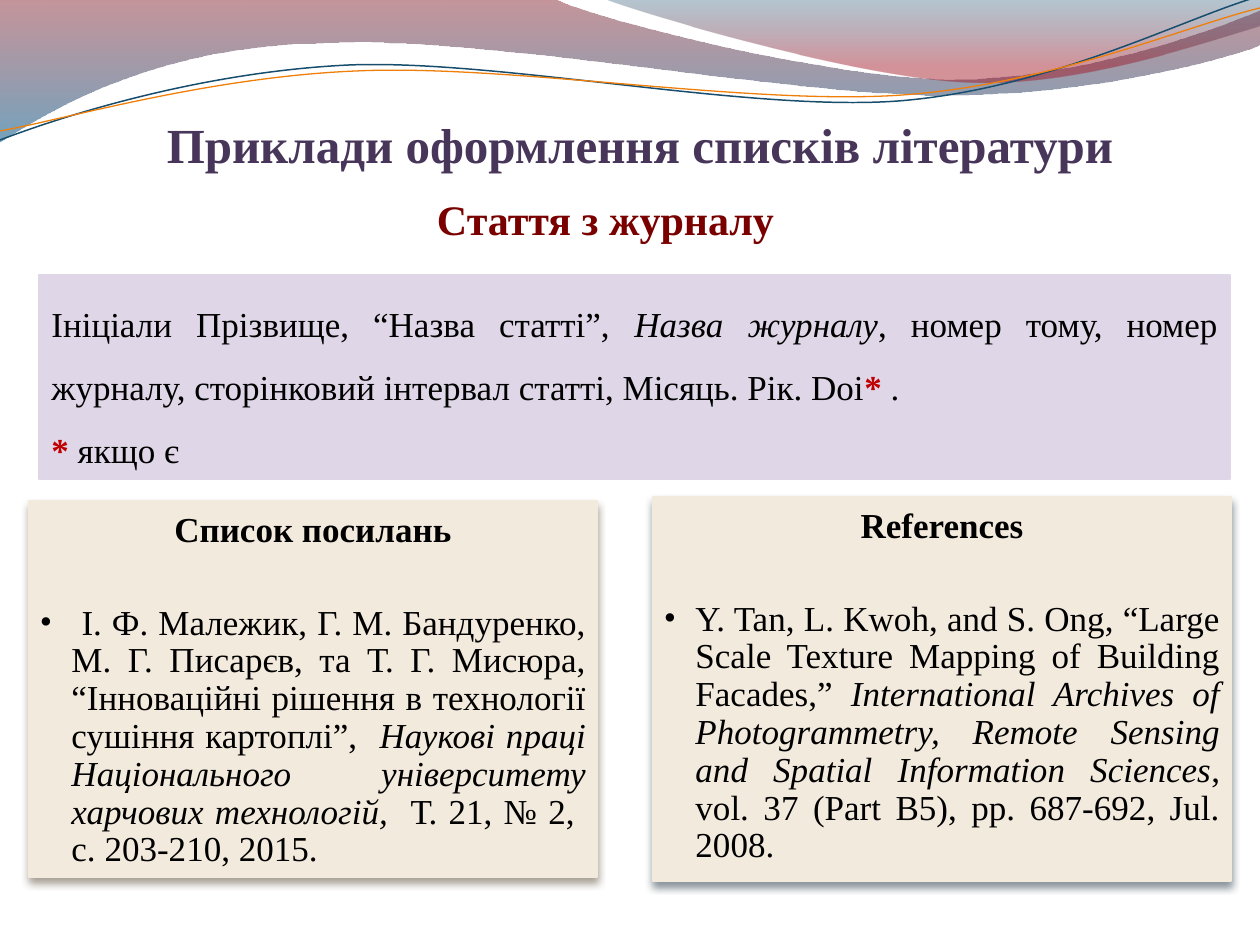
import pptx
import pptx.util
import pptx.dml.color
import pptx.enum.shapes
import pptx.enum.text
import pptx.oxml
import pptx.oxml.ns

PX = 914400 / 126
FONT = "Times New Roman"
ALIGN = pptx.enum.text.PP_ALIGN
rgb = pptx.dml.color.RGBColor.from_string
qn = pptx.oxml.ns.qn
NS = pptx.oxml.ns.nsdecls("a")


def place(sp, box):
    sp.left, sp.top, sp.width, sp.height = [round(v * PX) for v in box]
    tf = sp.text_frame
    tf.word_wrap = True
    tf.auto_size = pptx.enum.text.MSO_AUTO_SIZE.NONE
    tf.vertical_anchor = pptx.enum.text.MSO_ANCHOR.TOP
    return tf


def write(p, runs, size, align, color="000000", bold=None):
    p.alignment = align
    p.font.name = FONT
    p.font.size = pptx.util.Pt(size)
    p.font.color.rgb = rgb(color)
    p.font.bold = bold
    for text, style in runs:
        r = p.add_run()
        r.text = text
        if style == "i":
            r.font.italic = True
        elif style == "*":
            r.font.bold = True
            r.font.color.rgb = rgb("C00000")


prs = pptx.Presentation()
prs.slide_width = round(1260 * PX)
prs.slide_height = round(945 * PX)
s = prs.slides.add_slide(prs.slide_layouts[5])

waves = [
    ([(0, 0), (554, -1), (600, 21, 837, 79, 955, 79), (1075, 79, 1207, 33, 1260, 11),
      (1261, 45), (1239, 55, 1096, 96, 940, 95), (784, 95, 481, 35, 324, 43),
      (163, 45, 58, 105, -1, 142)],
     [(0, "7E1621", 45), (100, "005689", 55)], None),
    ([(604, -1), (641, 14, 859, 78, 969, 82), (1079, 87, 1211, 40, 1260, 26), (1260, 0)],
     [(0, "094467", 30), (80, "A10F1F", 45)], None),
    ([(0, 140), (60, 117, 199, 72, 349, 65), (498, 59, 747, 112, 898, 101),
      (1050, 89, 1182, 19, 1257, -3)], None, ("184E6D", 0.85)),
    ([(0, 131), (59, 121, 207, 77, 357, 71), (508, 64, 752, 106, 903, 95),
      (1053, 84, 1186, 26, 1260, 8)], None, ("F07F09", 0.75)),
]
for segments, stops, line in waves:
    anchors = [seg[-2:] for seg in segments]
    left, top = [min(axis) for axis in zip(*anchors)]
    fb = s.shapes.build_freeform(*anchors[0], scale=PX)
    fb.add_line_segments(anchors[1:], close=stops is not None)
    sp = fb.convert_to_shape()
    sp.shadow.inherit = False
    outline = next(sp._element.iter(qn("a:path")))
    for edge, seg in zip(outline.findall(qn("a:lnTo")), segments[1:]):
        if len(seg) == 6:
            pts = "".join(f'<a:pt x="{x - left}" y="{y - top}"/>'
                          for x, y in zip(seg[::2], seg[1::2]))
            outline.replace(edge, pptx.oxml.parse_xml(
                f"<a:cubicBezTo {NS}>{pts}</a:cubicBezTo>"))
    if stops:
        sp.line.fill.background()
        sp.fill.gradient()
        sp.fill.gradient_angle = 270
        for stop, (pos, color, alpha) in zip(sp.fill.gradient_stops, stops):
            stop.position = pos / 100
            stop.color.rgb = rgb(color)
        for clr, (pos, color, alpha) in zip(sp._element.spPr.iter(qn("a:srgbClr")), stops):
            clr.append(pptx.oxml.parse_xml(f'<a:alpha {NS} val="{alpha * 1000}"/>'))
    else:
        sp.fill.background()
        sp.line.color.rgb = rgb(line[0])
        sp.line.width = pptx.util.Pt(line[1])

cards = [
    ((29, 501, 568, 376), "45361E", "Список посилань", [
        (" І. Ф. Малежик, Г. М. Бандуренко, М. Г. Писарєв, та Т. Г. Мисюра, "
         "“Інноваційні рішення в технології сушіння картоплі”,  ", ""),
        ("Наукові праці Національного університету харчових технологій, ", "i"),
        (" Т. 21, № 2,  с. 203-210, 2015.", "")]),
    ((653, 497, 578, 384), "091F2C", "References", [
        ("Y. Tan, L. Kwoh, and S. Ong, “Large Scale Texture Mapping of Building Facades,” ", ""),
        ("International Archives of Photogrammetry, Remote Sensing and Spatial "
         "Information Sciences", "i"),
        (", vol. 37 (Part B5), pp. 687-692, Jul. 2008. ", "")]),
]
for box, shade, heading, entry in cards:
    sp = s.shapes.add_shape(pptx.enum.shapes.MSO_SHAPE.RECTANGLE, 0, 0, 0, 0)
    tf = place(sp, box)
    sp.fill.solid()
    sp.fill.fore_color.rgb = rgb("F3EADE")
    sp.line.color.rgb = rgb("F3EADE")
    sp.line.width = pptx.util.Pt(0.75)
    sp.shadow.inherit = False
    sp._element.spPr.find(qn("a:effectLst")).append(pptx.oxml.parse_xml(
        f'<a:outerShdw {NS} blurRad="57150" dist="38100" dir="5400000" algn="ctr" '
        f'rotWithShape="0"><a:srgbClr val="{shade}"><a:alpha val="48000"/>'
        '</a:srgbClr></a:outerShdw>'))
    tf.margin_left = tf.margin_right = tf.margin_top = tf.margin_bottom = round(11 * PX)
    p = tf.paragraphs[0]
    write(p, [(heading, "")], 20, ALIGN.CENTER, bold=True)
    p.line_spacing = 0.9
    p.space_after = pptx.util.Pt(31.5)
    p = tf.add_paragraph()
    write(p, entry, 20, ALIGN.JUSTIFY)
    p.line_spacing = 0.9
    pPr = p._p.get_or_add_pPr()
    pPr.set("marL", "228600")
    pPr.set("indent", "-228600")
    pPr.find(qn("a:defRPr")).addprevious(
        pptx.oxml.parse_xml(f'<a:buFont {NS} typeface="{FONT}"/>'))
    pPr.find(qn("a:defRPr")).addprevious(
        pptx.oxml.parse_xml(f'<a:buChar {NS} char="•"/>'))

sp = s.shapes.add_shape(pptx.enum.shapes.MSO_SHAPE.RECTANGLE, 0, 0, 0, 0)
tf = place(sp, (39, 275, 1191, 204))
sp.shadow.inherit = False
sp.fill.solid()
sp.fill.fore_color.rgb = rgb("DFD7E7")
sp.line.color.rgb = rgb("DFD7E7")
sp.line.width = pptx.util.Pt(0.75)
pattern = [
    [("Ініціали Прізвище, “Назва статті”, ", ""), ("Назва журналу", "i"),
     (", номер тому, номер журналу, сторінковий інтервал статті, Місяць. Рік. Doi", ""),
     ("*", "*"), (" . ", "")],
    [("* ", "*"), ("якщо є", "")],
]
for i, runs in enumerate(pattern):
    p = tf.add_paragraph() if i else tf.paragraphs[0]
    write(p, runs, 20, ALIGN.JUSTIFY)
    p.line_spacing = 1.5

tf = place(s.shapes.title, (148, 108, 984, 72))
write(tf.paragraphs[0], [("Приклади оформлення списків літератури", "")], 28,
      ALIGN.CENTER, "48365A", True)
tf = place(s.shapes.add_textbox(0, 0, 0, 0), (276, 187, 659, 63))
write(tf.paragraphs[0], [("Стаття з журналу", "")], 24, ALIGN.CENTER, "7A0000", True)

prs.save("out.pptx")
